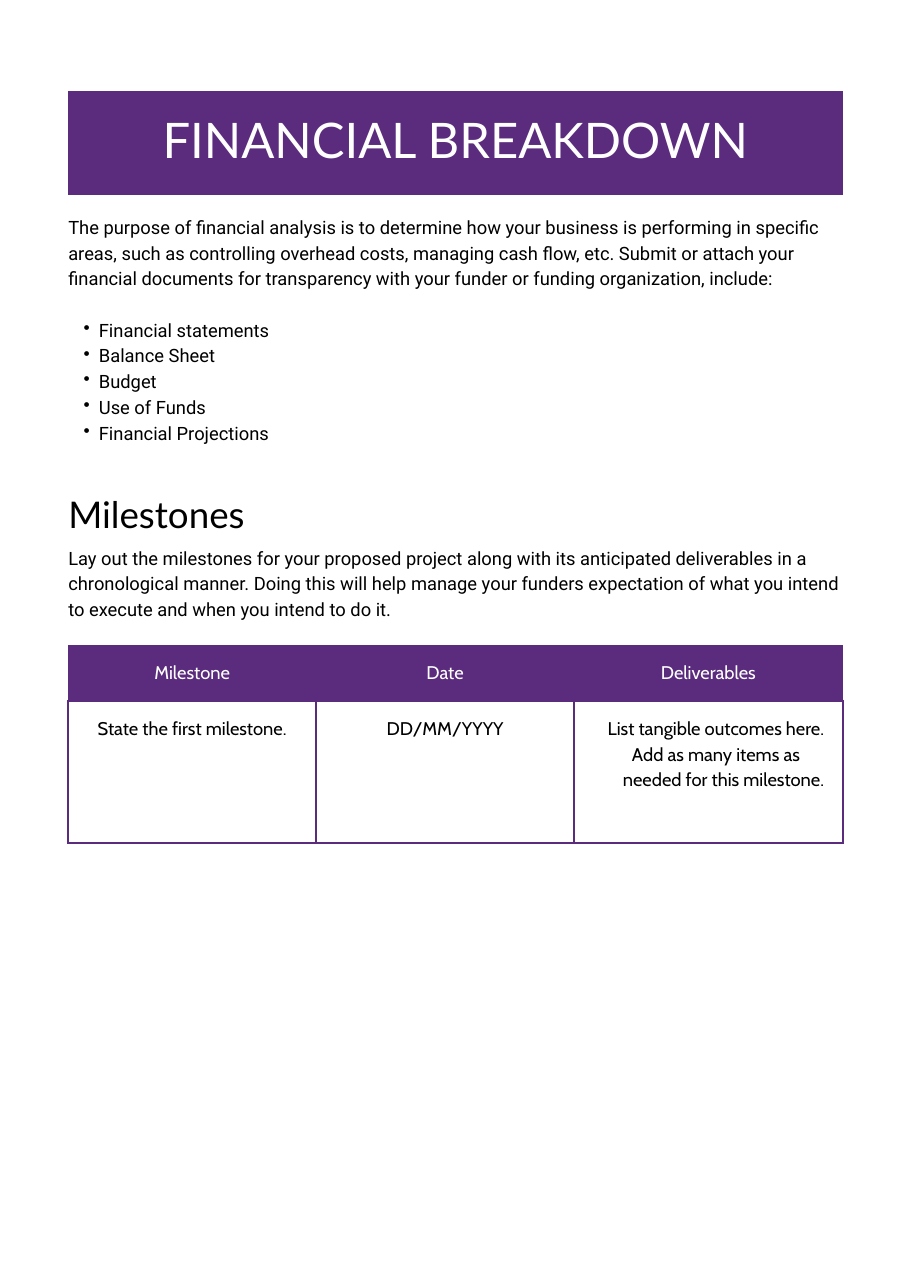
from lxml.etree import SubElement
from pptx import Presentation
from pptx.dml.color import RGBColor
from pptx.enum.text import PP_ALIGN
from pptx.oxml.ns import qn
from pptx.util import Pt

PURPLE = RGBColor(0x5B, 0x2C, 0x7D)
BLACK = RGBColor(0, 0, 0)
WHITE = RGBColor(255, 255, 255)
LEFT, WIDTH = 44.64, 506.16
LEADING = 1.4
EDGES = ("L", "R", "T", "B")

INTRO = (
    "The purpose of financial analysis is to determine how your business is "
    "performing in specific areas, such as controlling overhead costs, managing "
    "cash flow, etc. Submit or attach your financial documents for transparency "
    "with your funder or funding organization, include:"
)
PAPERS = ["Financial statements", "Balance Sheet", "Budget", "Use of Funds",
          "Financial Projections"]
PLAN = (
    "Lay out the milestones for your proposed project along with its anticipated "
    "deliverables in a chronological manner. Doing this will help manage your "
    "funders expectation of what you intend to execute and when you intend to do it."
)
HEADS = ["Milestone", "Date", "Deliverables"]
GOALS = ["State the first milestone.", "DD/MM/YYYY",
         "List tangible outcomes here.\nAdd as many items as needed for this milestone."]


class Page:
    """Hold the style and the current slide, and add its elements."""

    def __init__(self, slide):
        self.slide = slide

    def style(self, para, font, size, color=BLACK, align=PP_ALIGN.LEFT):
        para.alignment = align
        para.line_spacing = Pt(size * LEADING)
        for run in para.runs:
            run.font.name = font
            run.font.size = Pt(size)
            run.font.color.rgb = color

    def indent(self, para, bullet=None):
        para.level = 1
        props = para._p.get_or_add_pPr()
        props.set("marL", str(Pt(20)))
        props.set("indent", str(Pt(-10)))
        if bullet:
            SubElement(props, qn("a:buChar")).set("char", bullet)

    def text(self, top, height, words, font, size):
        box = self.slide.shapes.add_textbox(Pt(LEFT), Pt(top), Pt(WIDTH), Pt(height))
        frame = box.text_frame
        frame.word_wrap = True
        frame.margin_left = frame.margin_right = 0
        frame.margin_top = frame.margin_bottom = 0
        frame.text = words
        for para in frame.paragraphs:
            self.style(para, font, size)
        return frame

    def bullets(self, frame, items):
        for index, item in enumerate(items):
            para = frame.add_paragraph()
            para.text = item
            self.style(para, "Roboto", 12)
            if index == 0:
                para.space_before = Pt(12 * LEADING)
            self.indent(para, "•")

    def table(self, top, cols, rows):
        shape = self.slide.shapes.add_table(
            len(rows), len(cols), Pt(LEFT), Pt(top), Pt(sum(cols)), Pt(sum(rows)))
        grid = shape.table
        grid.first_row = grid.horz_banding = False
        for col, width in zip(grid.columns, cols):
            col.width = Pt(width)
        for row, height in zip(grid.rows, rows):
            row.height = Pt(height)
        return grid

    def border(self, cell, edges):
        props = cell._tc.get_or_add_tcPr()
        for index, edge in enumerate(EDGES):
            line = SubElement(props, qn("a:ln" + edge))
            props.insert(index, line)
            if edge in edges:
                line.set("w", str(Pt(1.5)))
                fill = SubElement(line, qn("a:solidFill"))
                SubElement(fill, qn("a:srgbClr")).set("val", str(PURPLE))
            else:
                line.set("w", "0")
                SubElement(line, qn("a:noFill"))

    def cell(self, cell, words, font, size, pad, filled, edges):
        cell.margin_left = cell.margin_right = Pt(pad)
        cell.margin_top = cell.margin_bottom = Pt(pad)
        if filled:
            cell.fill.solid()
            cell.fill.fore_color.rgb = PURPLE
        else:
            cell.fill.background()
        self.border(cell, edges)
        cell.text_frame.text = words
        color = WHITE if filled else BLACK
        for para in cell.text_frame.paragraphs:
            self.style(para, font, size, color, PP_ALIGN.CENTER)


def main():
    deck = Presentation()
    deck.slide_width, deck.slide_height = Pt(594.72), Pt(841.68)
    page = Page(deck.slides.add_slide(deck.slide_layouts[6]))

    title = page.table(59.76, [WIDTH], [67.68])
    page.cell(title.cell(0, 0), "FINANCIAL BREAKDOWN", "Lato", 32, 6, True, "")

    intro = page.text(138.96, 221.04, INTRO, "Roboto", 12)
    page.bullets(intro, PAPERS)
    page.text(316.8, 32.4, "Milestones", "Lato", 24)
    page.text(354.96, 64.8, PLAN, "Roboto", 12)

    goals = page.table(421.2, [162, 168.48, 175.68], [36.72, 92.88])
    for col, (head, goal) in enumerate(zip(HEADS, GOALS)):
        page.cell(goals.cell(0, col), head, "Cabin", 12, 9, True, "B")
        page.cell(goals.cell(1, col), goal, "Cabin", 12, 9, False, EDGES)
    for para in goals.cell(1, 2).text_frame.paragraphs:
        page.indent(para)

    deck.save("out.pptx")


if __name__ == "__main__":
    main()
